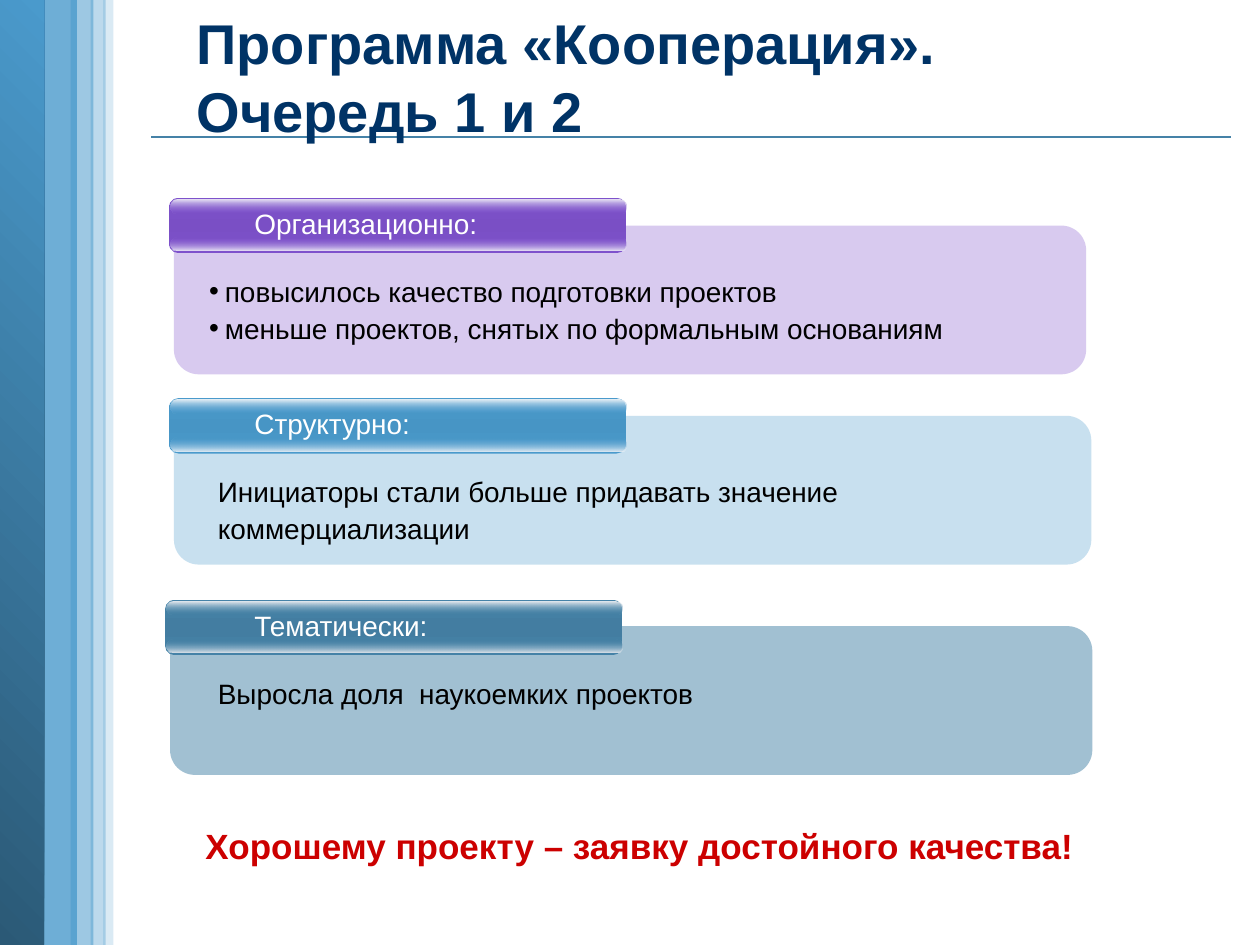
from dataclasses import dataclass

from lxml import etree
from pptx import Presentation
from pptx.dml.color import RGBColor
from pptx.enum import shapes, text
from pptx.oxml import ns
from pptx.util import Pt


@dataclass(frozen=True)
class Theme:
    font: str = "Arial"
    navy: str = "003366"
    red: str = "CC0000"
    black: str = "000000"
    white: str = "FFFFFF"
    blue: str = "4A9ACC"
    steel: str = "4582A7"
    violet: str = "7E52CC"
    deep: str = "2B5976"
    title_size: int = 32
    slogan_size: int = 20
    body_size: int = 16


THEME = Theme()

# Stripes of the left edge: left, top, width, height, opacity in percent
STRIPES = [
    (21.6, 0, 22.3, 542, 80),
    (-0.7, 0, 25.9, 540, None),
    (59, -1.4, 5.8, 541.4, 20),
    (40.3, 0, 13, 540.7, 54),
    (51.8, 0, 8.6, 541.4, 37),
]

# Panel box, panel opacity, tab corner, and tab colours: base, middle, top light, bottom light
SECTIONS = [
    ("Организационно:", (99.4, 128.9, 521.3, 85), 30, (96.5, 113),
     (THEME.violet, "7A4FC5", "EAE7F5", "ECE9F6")),
    ("Структурно:", (99.4, 237.6, 524.2, 85), 30, (96.5, 227.5),
     (THEME.blue, "4795C5", "EEF3F8", "EAF0F6")),
    ("Тематически:", (97.2, 357.8, 527, 85), 50, (94.3, 342.7),
     (THEME.steel, "437DA1", "EAEDF1", "E2E7ED")),
]
TAB_WIDTH, TAB_HEIGHT = 261.4, 31.7
GLOSS_HEIGHT = 7.9
LABEL_LEFT = 138.3


def set_values(target, values):
    for name, value in values.items():
        setattr(target, name, value)


def add_color(parent, color, opacity=100):
    node = etree.SubElement(parent, ns.qn("a:srgbClr"), val=color)
    if opacity < 100:
        etree.SubElement(node, ns.qn("a:alpha"), val=str(opacity * 1000))


def add_block(page, box, radius=None):
    """Plain rectangle, or a rounded one when a radius is given."""
    kind = shapes.MSO_SHAPE.RECTANGLE if radius is None else shapes.MSO_SHAPE.ROUNDED_RECTANGLE
    block = page.shapes.add_shape(kind, *map(Pt, box))
    if radius is not None:
        block.adjustments[0] = radius
    block.shadow.inherit = False
    block.line.fill.background()
    return block


def fill_solid(block, color, opacity):
    block.fill.solid()
    block.fill.fore_color.rgb = RGBColor.from_string(color)
    node = block.element.spPr.find(".//" + ns.qn("a:srgbClr"))
    etree.SubElement(node, ns.qn("a:alpha"), val=str(opacity * 1000))


def fill_gradient(block, angle, stops):
    """Stops are (position, color, opacity), all in percent."""
    block.fill.gradient()
    gradient = block.element.spPr.find(ns.qn("a:gradFill"))
    for child in list(gradient):
        gradient.remove(child)
    stop_list = etree.SubElement(gradient, ns.qn("a:gsLst"))
    for position, color, opacity in stops:
        stop = etree.SubElement(stop_list, ns.qn("a:gs"), pos=str(position * 1000))
        add_color(stop, color, opacity)
    etree.SubElement(gradient, ns.qn("a:lin"), ang=str(angle * 60000), scaled="0")


def place(holder, box):
    """Move a placeholder into its box and in front of everything so far."""
    set_values(holder, dict(zip(("left", "top", "width", "height"), map(Pt, box))))
    holder.element.getparent().append(holder.element)


def write(holder, lines, size, color, bold=False, spacing=1.0, wrap=True,
          align=text.PP_ALIGN.LEFT, anchor=text.MSO_ANCHOR.TOP):
    frame = holder.text_frame
    frame.text = "\n".join(lines)
    set_values(frame, {"word_wrap": wrap, "auto_size": text.MSO_AUTO_SIZE.NONE,
                       "vertical_anchor": anchor})
    for para in frame.paragraphs:
        set_values(para, {"alignment": align, "line_spacing": spacing, "space_before": Pt(0)})
        for span in para.runs:
            set_values(span.font, {"name": THEME.font, "size": Pt(size), "bold": bold})
            span.font.color.rgb = RGBColor.from_string(color)


def add_text(page, box, line, size=THEME.body_size, color=THEME.black, **options):
    write(page.shapes.add_textbox(*map(Pt, box)), [line], size, color, **options)


def add_bullets(holder, indent):
    for para in holder.text_frame.paragraphs:
        props = para._p.get_or_add_pPr()
        props.set("marL", str(Pt(indent)))
        props.set("indent", str(-Pt(indent)))
        etree.SubElement(props, ns.qn("a:buChar"), char="•")


def add_backdrop(page):
    rule = page.shapes.add_connector(shapes.MSO_CONNECTOR.STRAIGHT,
                                     Pt(86.4), Pt(78.5), Pt(703.4), Pt(78.5))
    rule.line.width = Pt(1)
    rule.line.color.rgb = RGBColor.from_string(THEME.steel)
    etree.SubElement(rule.element.spPr, ns.qn("a:effectLst"))
    for *box, opacity in STRIPES:
        stripe = add_block(page, box)
        if opacity is None:
            fill_gradient(stripe, 315, [(0, THEME.deep, 100), (100, THEME.blue, 100)])
        else:
            fill_solid(stripe, THEME.blue, opacity)


def add_tab(page, label, corner, colors):
    left, top = corner
    base, middle, top_light, bottom_light = colors
    tab = add_block(page, (left, top, TAB_WIDTH, TAB_HEIGHT), 0.175)
    fill_gradient(tab, 90, [(0, base, 100), (50, middle, 100), (100, base, 100)])
    # Glossy bands along the lower and upper edge
    for offset, stops in (
        (22.5, [(0, base, 0), (100, bottom_light, 100)]),
        (0.8, [(0, top_light, 100), (100, base, 0)]),
    ):
        gloss = add_block(page, (left + 0.7, top + offset, TAB_WIDTH - 0.8, GLOSS_HEIGHT), 0.5)
        fill_gradient(gloss, 90, stops)
    add_text(page, (LABEL_LEFT, top + 1.5, 148, 26.6), label, color=THEME.white, wrap=False)


def main():
    deck = Presentation()
    deck.slide_width, deck.slide_height = Pt(720), Pt(540)
    page = deck.slides.add_slide(deck.slide_layouts[1])
    title, body = page.placeholders

    add_backdrop(page)

    # Panels, then their tabs on top
    for _, box, opacity, _, colors in SECTIONS:
        fill_solid(add_block(page, box, 0.167), colors[0], opacity)
    for label, _, _, corner, colors in SECTIONS:
        add_tab(page, label, corner, colors)

    # Panel texts
    place(body, (112.3, 151.2, 537.1, 68.4))
    write(body, ["повысилось качество подготовки проектов",
                 "меньше проектов, снятых по формальным основаниям"],
          THEME.body_size, THEME.black, spacing=1.1)
    add_bullets(body, 9)
    add_text(page, (117.4, 265.7, 455, 48.2),
             "Инициаторы стали больше придавать значение коммерциализации", spacing=1.1)
    add_text(page, (117.4, 380.9, 455, 26.6), "Выросла доля  наукоемких проектов", spacing=1.1)

    # Slogan and title
    add_text(page, (104.4, 465.1, 522, 33.8), "Хорошему проекту – заявку достойного качества!",
             THEME.slogan_size, THEME.red, bold=True, spacing=1.1, align=text.PP_ALIGN.CENTER)
    place(title, (105.1, 3.6, 626.4, 79.9))
    write(title, ["Программа «Кооперация».\vОчередь 1 и 2"], THEME.title_size, THEME.navy,
          bold=True, anchor=text.MSO_ANCHOR.MIDDLE)

    deck.save("out.pptx")


if __name__ == "__main__":
    main()
